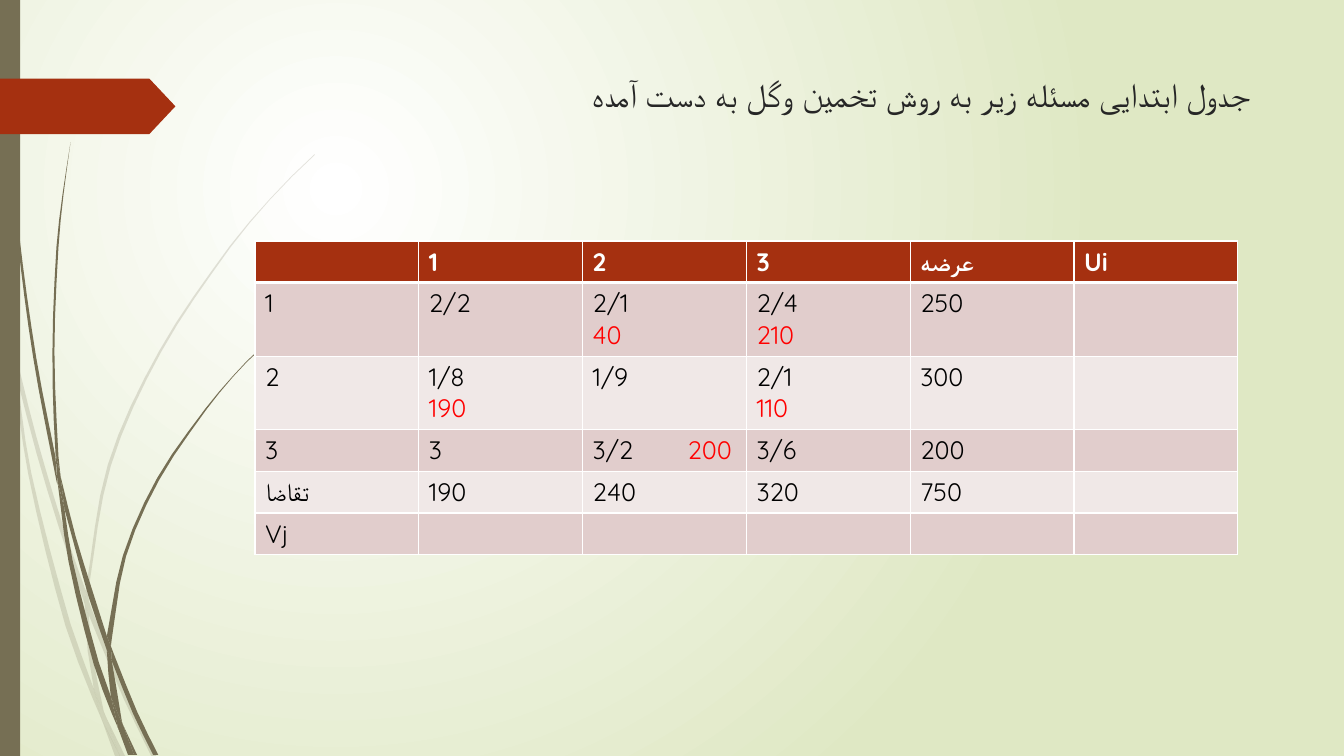
import math
from dataclasses import dataclass
from typing import Any, NamedTuple

import pptx
import pptx.dml.color
import pptx.enum.shapes
import pptx.enum.text
import pptx.oxml
import pptx.oxml.ns
import pptx.util
from lxml import etree

GRID = pptx.util.Inches(0.01)  # the slide is 1333 columns by 750 rows
COLUMNS, ROWS = 1333, 750
CURVE_STEP = 40
Point = tuple[float, float]


@dataclass(frozen=True)
class Theme:
    font: str = "Quicksand"
    title_size: int = 24
    table_size: int = 18
    title: str = "262626"
    olive: str = "766F54"
    rust: str = "A53010"
    white: str = "FFFFFF"
    meadow: str = "DFE8C4"
    cost: str = "000000"
    allocation: str = "FF0000"
    bands: tuple[str, str] = ("E1CDCC", "F0E8E7")
    pale_alpha: int = 20


THEME = Theme()


class Blade(NamedTuple):
    """A sliver of grass: one edge out, the other edge back."""
    out: list[Point]
    back: list[Point]


class Cell(NamedTuple):
    cost: str = ""
    allocation: str = ""
    same_line: bool = False


PALE_GRASS = [
    Blade([(11, 350), (9, 322), (0, 282)], [(0, 299), (10, 344)]),
    Blade([(14, 345), (36, 433), (62, 520), (85, 586)],
          [(84, 599), (58, 522), (36, 449), (17, 376)]),
    Blade([(88, 596), (92, 607), (127, 692), (155, 750)], [(150, 750), (123, 694), (88, 610)]),
    Blade([(105, 711), (124, 750)], [(119, 750)]),
    Blade([(11, 350), (28, 470), (65, 621), (92, 693), (101, 714)],
          [(99, 707), (93, 683), (70, 619), (31, 469), (17, 376)]),
    Blade([(84, 599), (87, 646), (93, 683), (96, 692), (105, 711)],
          [(103, 706), (91, 646), (88, 610)]),
    Blade([(85, 586), (107, 461), (158, 348), (228, 244), (268, 197), (289, 175), (312, 153)],
          [(312, 154), (290, 175), (268, 198), (229, 245), (160, 349), (110, 462), (88, 584),
           (88, 596)]),
    Blade([(101, 714), (114, 750)], [(119, 750)]),
    Blade([(84, 599), (85, 586)], [(88, 596), (88, 610)]),
    Blade([(93, 683), (99, 707), (101, 714), (119, 750)], [(105, 711), (96, 692)]),
]
DARK_GRASS = [
    Blade([(3, 0), (4, 48), (7, 110), (17, 233), (33, 355), (56, 477), (57, 481)],
          [(55, 453), (36, 355), (19, 232), (8, 109), (5, 48), (4, 0)]),
    Blade([(60, 472), (75, 532), (93, 590), (106, 631)], [(106, 645), (88, 592), (64, 505)]),
    Blade([(110, 641), (113, 649), (136, 706), (157, 749)], [(152, 749), (132, 708), (111, 656)]),
    Blade([(57, 477), (68, 557), (93, 659), (111, 708), (117, 722)],
          [(116, 717), (110, 691), (98, 657), (72, 556), (64, 505)]),
    Blade([(60, 472), (58, 453), (54, 349), (58, 245), (63, 193), (70, 141)],
          [(70, 141), (62, 193), (56, 245), (52, 349), (55, 449), (60, 472)]),
    Blade([(122, 719), (136, 749)], [(133, 749)]),
    Blade([(57, 477), (55, 449)], [(60, 472), (64, 505)]),
    Blade([(106, 631), (122, 551), (156, 474), (204, 405), (231, 373), (245, 358), (260, 344)],
          [(261, 344), (245, 359), (231, 374), (205, 406), (158, 476), (125, 552), (111, 633),
           (110, 641)]),
    Blade([(117, 722), (127, 749)], [(131, 749)]),
    Blade([(106, 645), (110, 691), (116, 706), (122, 719)], [(121, 716), (111, 656), (109, 651)]),
    Blade([(106, 645), (106, 631)], [(110, 641), (111, 656)]),
    Blade([(110, 691), (116, 717), (117, 722), (130, 749)], [(133, 749), (122, 719), (116, 706)]),
]

TITLE = "جدول ابتدایی مسئله زیر به روش تخمین وگل به دست آمده "
TRANSPORT = [
    [Cell(), Cell("1"), Cell("2"), Cell("3"), Cell("عرضه"), Cell("Ui")],
    [Cell("1"), Cell("2/2"), Cell("2/1", "40"), Cell("2/4", "210"), Cell("250"), Cell()],
    [Cell("2"), Cell("1/8", "190"), Cell("1/9"), Cell("2/1", "110"), Cell("300"), Cell()],
    [Cell("3"), Cell("3"), Cell("3/2", "200", True), Cell("3/6"), Cell("200"), Cell()],
    [Cell("تقاضا"), Cell("190"), Cell("240"), Cell("320"), Cell("750"), Cell()],
    [Cell("Vj")] + [Cell()] * 5,
]
SINGLE_ROW, DOUBLE_ROW = 41.3, 73
TABLE_COLUMN = 162.45
ALLOCATION_TAB = 94


def cells(count: float) -> int:
    return round(count * GRID)


def apply(target: Any, formats: dict[str, Any]) -> None:
    for name, value in formats.items():
        setattr(target, name, value)


def paint(fill: Any, colour: str) -> None:
    fill.solid()
    fill.fore_color.rgb = pptx.dml.color.RGBColor.from_string(colour)


def write(paragraph: Any, text: str, size: int, colour: str, bold: bool = False) -> None:
    run = paragraph.add_run()
    run.text = text
    apply(run.font, {"name": THEME.font, "size": pptx.util.Pt(size), "bold": bold})
    run.font.color.rgb = pptx.dml.color.RGBColor.from_string(colour)
    # Persian letters take their typeface from the complex-script font
    etree.SubElement(run._r.get_or_add_rPr(), pptx.oxml.ns.qn("a:cs"), typeface=THEME.font)


def finish(shape: Any, colour: str) -> None:
    paint(shape.fill, colour)
    shape.line.fill.background()
    shape.shadow.inherit = False


def smooth(edge: list[Point]) -> list[Point]:
    """Pass a Hermite curve through an edge, with more steps on longer spans."""
    padded = [edge[0], *edge, edge[-1]]
    curve = [edge[0]]
    for a, b, c, d in zip(padded, padded[1:], padded[2:], padded[3:]):
        span = math.dist(b, c)
        lead, trail = span / (math.dist(a, b) + span), span / (span + math.dist(c, d))
        steps = math.ceil(span / CURVE_STEP)
        for t in (step / steps for step in range(1, steps + 1)):
            ease = t * t * (3 - 2 * t)
            curve.append(tuple(
                q + (r - q) * ease + (r - p) * lead * t * (1 - t) ** 2
                - (s - q) * trail * t * t * (1 - t)
                for p, q, r, s in zip(a, b, c, d)))
    return curve


def draw_blade(slide: Any, blade: Blade, alpha: int) -> None:
    outline = [(cells(x), cells(y)) for x, y in smooth(blade.out) + smooth(blade.back)]
    builder = slide.shapes.build_freeform(*outline[0])
    builder.add_line_segments(outline[1:], close=True)
    grass = builder.convert_to_shape()
    finish(grass, THEME.olive)
    if alpha < 100:
        colour = grass.fill._xPr.find(".//" + pptx.oxml.ns.qn("a:srgbClr"))
        etree.SubElement(colour, pptx.oxml.ns.qn("a:alpha"), val=str(alpha * 1000))


def draw_background(slide: Any) -> None:
    glow = slide.background.fill
    glow.gradient()
    for stop, colour in zip(glow.gradient_stops, (THEME.white, THEME.meadow)):
        stop.color.rgb = pptx.dml.color.RGBColor.from_string(colour)
    gradient = slide.element.find(".//" + pptx.oxml.ns.qn("a:gradFill"))
    gradient.remove(gradient.find(pptx.oxml.ns.qn("a:lin")))
    circle = etree.SubElement(gradient, pptx.oxml.ns.qn("a:path"), path="circle")
    etree.SubElement(circle, pptx.oxml.ns.qn("a:fillToRect"),
                     l="50000", t="50000", r="100000", b="100000")


def draw_border(cell: Any, widths: dict[str, int]) -> None:
    for side, width in widths.items():
        cell._tc.get_or_add_tcPr().append(pptx.oxml.parse_xml(
            f'<a:{side} {pptx.oxml.ns.nsdecls("a")} w="{pptx.util.Pt(width)}"><a:solidFill>'
            f'<a:srgbClr val="{THEME.white}"/></a:solidFill></a:{side}>'))


def fill_cell(target: Any, content: Cell, row: int) -> None:
    header = row == 0
    draw_border(target, {"lnL": 1, "lnR": 1, "lnT": 3 if row == 1 else 1, "lnB": 3 if header else 1})
    paint(target.fill, THEME.rust if header else THEME.bands[(row - 1) % 2])
    paragraph = target.text_frame.paragraphs[0]
    paragraph.alignment = pptx.enum.text.PP_ALIGN.LEFT
    if content.cost:
        cost = content.cost + ("\t" if content.same_line else "")
        write(paragraph, cost, THEME.table_size, THEME.white if header else THEME.cost, header)
    if content.same_line:
        tabs = etree.SubElement(paragraph._p.get_or_add_pPr(), pptx.oxml.ns.qn("a:tabLst"))
        etree.SubElement(tabs, pptx.oxml.ns.qn("a:tab"), pos=str(cells(ALLOCATION_TAB)), algn="l")
    elif content.allocation:
        paragraph.add_line_break()
    if content.allocation:
        write(paragraph, content.allocation, THEME.table_size, THEME.allocation)


def draw_table(slide: Any) -> None:
    heights = [DOUBLE_ROW if any(c.allocation and not c.same_line for c in row) else SINGLE_ROW
               for row in TRANSPORT]
    width = TABLE_COLUMN * len(TRANSPORT[0])
    table = slide.shapes.add_table(len(TRANSPORT), len(TRANSPORT[0]), cells(253), cells(239),
                                   cells(width), cells(sum(heights))).table
    apply(table, {"first_row": False, "horz_banding": False})
    for row, contents in enumerate(TRANSPORT):
        table.rows[row].height = cells(heights[row])
        for column, content in enumerate(contents):
            fill_cell(table.cell(row, column), content, row)


def main() -> None:
    deck = pptx.Presentation()
    apply(deck, {"slide_width": cells(COLUMNS), "slide_height": cells(ROWS)})
    slide = deck.slides.add_slide(deck.slide_layouts[6])
    draw_background(slide)

    # Grass, side bar and arrow tag
    for blades, alpha in ((PALE_GRASS, THEME.pale_alpha), (DARK_GRASS, 100)):
        for blade in blades:
            draw_blade(slide, blade, alpha)
    presets = pptx.enum.shapes.MSO_SHAPE
    side_bar = slide.shapes.add_shape(presets.RECTANGLE, 0, 0, cells(20), cells(ROWS))
    finish(side_bar, THEME.olive)
    tag = slide.shapes.add_shape(presets.PENTAGON, 0, cells(78), cells(174), cells(55))
    tag.adjustments[0] = 0.47
    finish(tag, THEME.rust)

    # Title
    heading = slide.shapes.add_textbox(cells(284), cells(68), cells(975), cells(81)).text_frame
    apply(heading, {"word_wrap": True, "vertical_anchor": pptx.enum.text.MSO_ANCHOR.TOP})
    heading.paragraphs[0].alignment = pptx.enum.text.PP_ALIGN.RIGHT
    write(heading.paragraphs[0], TITLE, THEME.title_size, THEME.title)

    draw_table(slide)
    deck.save("out.pptx")


if __name__ == "__main__":
    main()
